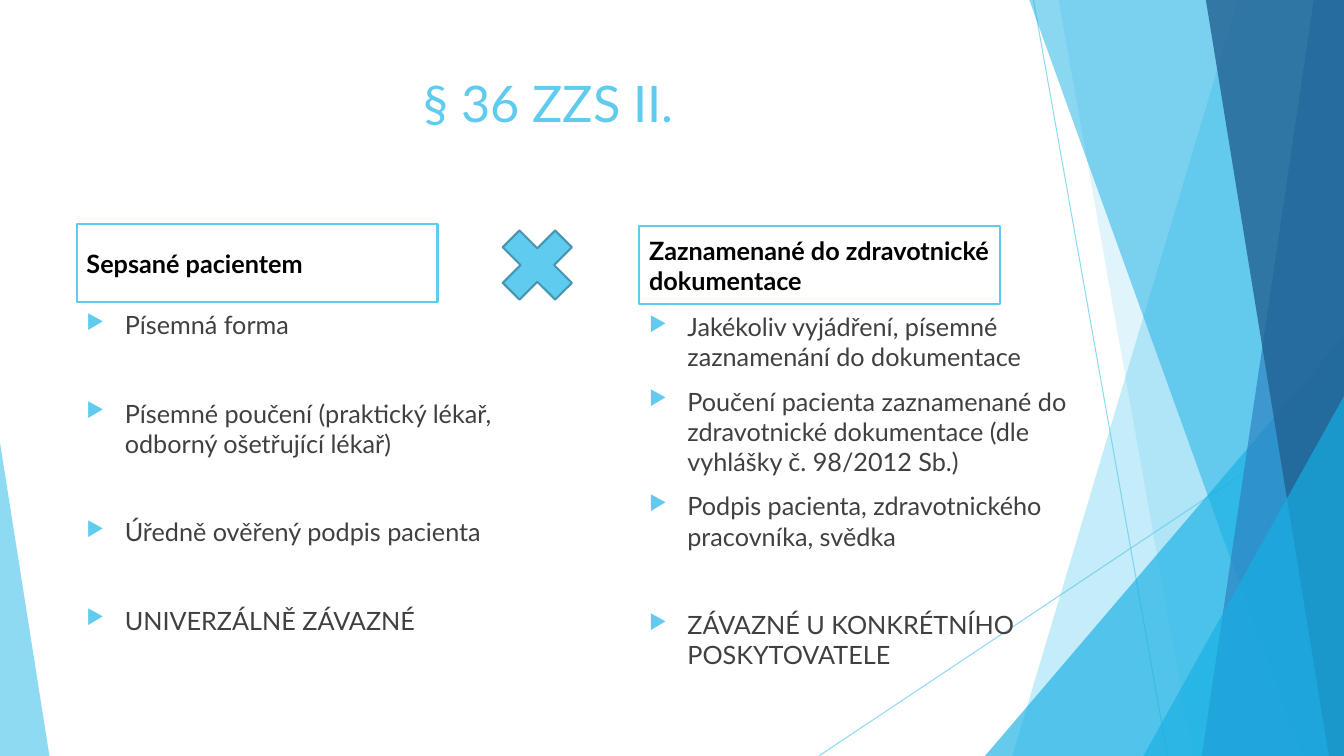
import pptx
import pptx.util
import pptx.dml.color
import pptx.enum.shapes
import pptx.enum.text
import pptx.oxml.ns
import lxml.etree

RGBColor = pptx.dml.color.RGBColor
SHAPE = pptx.enum.shapes.MSO_SHAPE
ALIGN = pptx.enum.text.PP_ALIGN
ANCHOR = pptx.enum.text.MSO_ANCHOR
qn = pptx.oxml.ns.qn

SKY = RGBColor(0x5F, 0xCB, 0xEF)
CYAN = RGBColor(0x17, 0xB0, 0xE4)
BLUE = RGBColor(0x2E, 0x83, 0xC3)
NAVY = RGBColor(0x22, 0x62, 0x92)
TEAL = RGBColor(0x46, 0x96, 0xB1)
GREY = RGBColor(0x40, 0x40, 0x40)
BLACK = RGBColor(0, 0, 0)
WHITE = RGBColor(0xFF, 0xFF, 0xFF)

FONT = "Lato"
NORMAL_GAP = 10
WIDE_GAP = 41.6


def add_child(parent, tag, **attributes):
    return lxml.etree.SubElement(parent, qn(tag), **attributes)


def set_opacity(element, percent):
    for color in element.iter(qn("a:srgbClr")):
        add_child(color, "a:alpha", val=str(percent * 1000))


def add_bullet(para):
    properties = para._p.get_or_add_pPr()
    properties.set("marL", str(pptx.util.Inches(0.38)))
    properties.set("indent", str(-pptx.util.Inches(0.38)))
    add_child(add_child(properties, "a:buClr"), "a:srgbClr", val=str(SKY))
    add_child(properties, "a:buSzPct", val="80000")
    add_child(properties, "a:buChar", char="▶")


def write_text(para, text, size=18, color=GREY, bold=False, align=ALIGN.LEFT, gap=0, bullet=False):
    para.alignment = align
    para.space_before = pptx.util.Pt(gap)
    span = para.add_run()
    span.text = text
    span.font.name = FONT
    span.font.size = pptx.util.Pt(size)
    span.font.bold = bold
    span.font.color.rgb = color
    if bullet:
        add_bullet(para)


class Page:
    def __init__(self, deck):
        self.width, self.height = deck.slide_width, deck.slide_height
        self.shapes = deck.slides.add_slide(deck.slide_layouts[6]).shapes

    def spot(self, x, y):
        return round(self.width * x / 100), round(self.height * y / 100)

    def area(self, x, y, width, height):
        return *self.spot(x, y), *self.spot(width, height)

    def paint(self, shape, fill, opacity=100, line=None):
        shape.shadow.inherit = False
        shape.fill.solid()
        shape.fill.fore_color.rgb = fill
        if opacity < 100:
            set_opacity(shape._element.spPr, opacity)
        if line is None:
            shape.line.fill.background()
        else:
            shape.line.color.rgb = line
            shape.line.width = pptx.util.Pt(1.5)

    def hairline(self, start, end):
        line = self.shapes.add_connector(
            pptx.enum.shapes.MSO_CONNECTOR.STRAIGHT, *self.spot(*start), *self.spot(*end))
        line.line.color.rgb = SKY
        line.line.width = pptx.util.Pt(0.75)
        properties = line._element.spPr
        set_opacity(properties, 70)
        add_child(properties, "a:effectLst")

    def ribbon(self, top, bottom, color, opacity):
        builder = self.shapes.build_freeform(*self.spot(top, 0), scale=1.0)
        corners = [(100, 0), (100, 100), (bottom, 100)]
        builder.add_line_segments([self.spot(*corner) for corner in corners], close=True)
        self.paint(builder.convert_to_shape(), color, opacity)

    def triangle(self, x, y, width, apex, color, opacity):
        box = self.shapes.add_shape(
            SHAPE.ISOSCELES_TRIANGLE, *self.area(x, y, width, 100 - y))
        box.adjustments[0] = apex
        self.paint(box, color, opacity)

    def cross(self, *area):
        self.paint(self.shapes.add_shape(SHAPE.MATH_MULTIPLY, *self.area(*area)), SKY, line=TEAL)

    def text_frame(self, *area):
        frame = self.shapes.add_textbox(*self.area(*area)).text_frame
        frame.word_wrap = True
        return frame

    def title(self, text, *area):
        frame = self.text_frame(*area)
        write_text(frame.paragraphs[0], text, size=36, color=SKY, align=ALIGN.CENTER)

    def heading(self, text, *area):
        box = self.shapes.add_shape(SHAPE.RECTANGLE, *self.area(*area))
        self.paint(box, WHITE, line=SKY)
        frame = box.text_frame
        frame.word_wrap = True
        frame.vertical_anchor = ANCHOR.MIDDLE
        write_text(frame.paragraphs[0], text, color=BLACK, bold=True)

    def bullets(self, items, *area):
        frame = self.text_frame(*area)
        for index, (text, gap) in enumerate(items):
            para = frame.add_paragraph() if index else frame.paragraphs[0]
            write_text(para, text, gap=gap, bullet=True)


COLUMNS = [
    (5.7, 29.6, "Sepsané pacientem", [
        ("Písemná forma", NORMAL_GAP),
        ("Písemné poučení (praktický lékař, odborný ošetřující lékař)", WIDE_GAP),
        ("Úředně ověřený podpis pacienta", WIDE_GAP),
        ("UNIVERZÁLNĚ ZÁVAZNÉ", WIDE_GAP),
    ]),
    (47.56, 29.87, "Zaznamenané do zdravotnické dokumentace", [
        ("Jakékoliv vyjádření, písemné zaznamenání do dokumentace", NORMAL_GAP),
        ("Poučení pacienta zaznamenané do zdravotnické dokumentace "
         "(dle vyhlášky č. 98/2012 Sb.)", NORMAL_GAP),
        ("Podpis pacienta, zdravotnického pracovníka, svědka", NORMAL_GAP),
        ("ZÁVAZNÉ U KONKRÉTNÍHO POSKYTOVATELE", WIDE_GAP),
    ]),
]


def draw_backdrop(page):
    page.hairline((76.9, 0), (86.87, 100))
    page.hairline((100, 53.73), (60.92, 100))
    page.ribbon(92.12, 75.32, SKY, 36)
    page.ribbon(78.77, 88.75, SKY, 20)
    page.triangle(73.29, 44.4, 26.71, 1, CYAN, 66)
    page.ribbon(76.59, 96.85, CYAN, 50)
    page.ribbon(97.75, 89.42, BLUE, 70)
    page.ribbon(89.72, 98.87, NAVY, 80)
    page.triangle(85.07, 52.4, 14.93, 1, CYAN, 66)
    page.triangle(0, 58.53, 3.68, 0, SKY, 70)


def main():
    deck = pptx.Presentation()
    deck.slide_width = pptx.util.Inches(13.33)
    deck.slide_height = pptx.util.Inches(7.5)
    page = Page(deck)
    draw_backdrop(page)
    page.title("§ 36 ZZS II.", 5.55, 8.93, 70.52, 19.2)
    page.cross(36.23, 28.4, 7.5, 13.33)
    for left, top, heading, items in COLUMNS:
        page.bullets(items, left, top + 10.67, 34.36, 48.13)
        page.heading(heading, left, top, 26.86, 10.4)
    deck.save("out.pptx")


if __name__ == "__main__":
    main()
